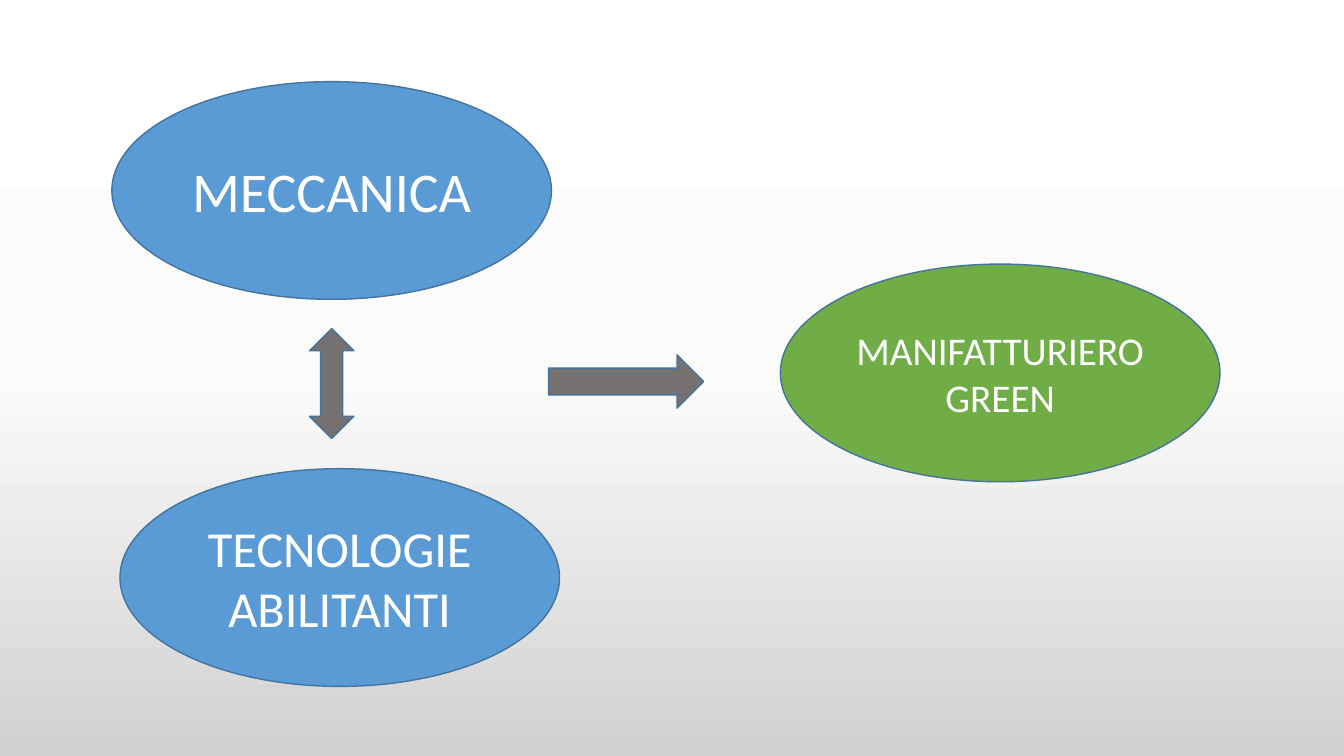
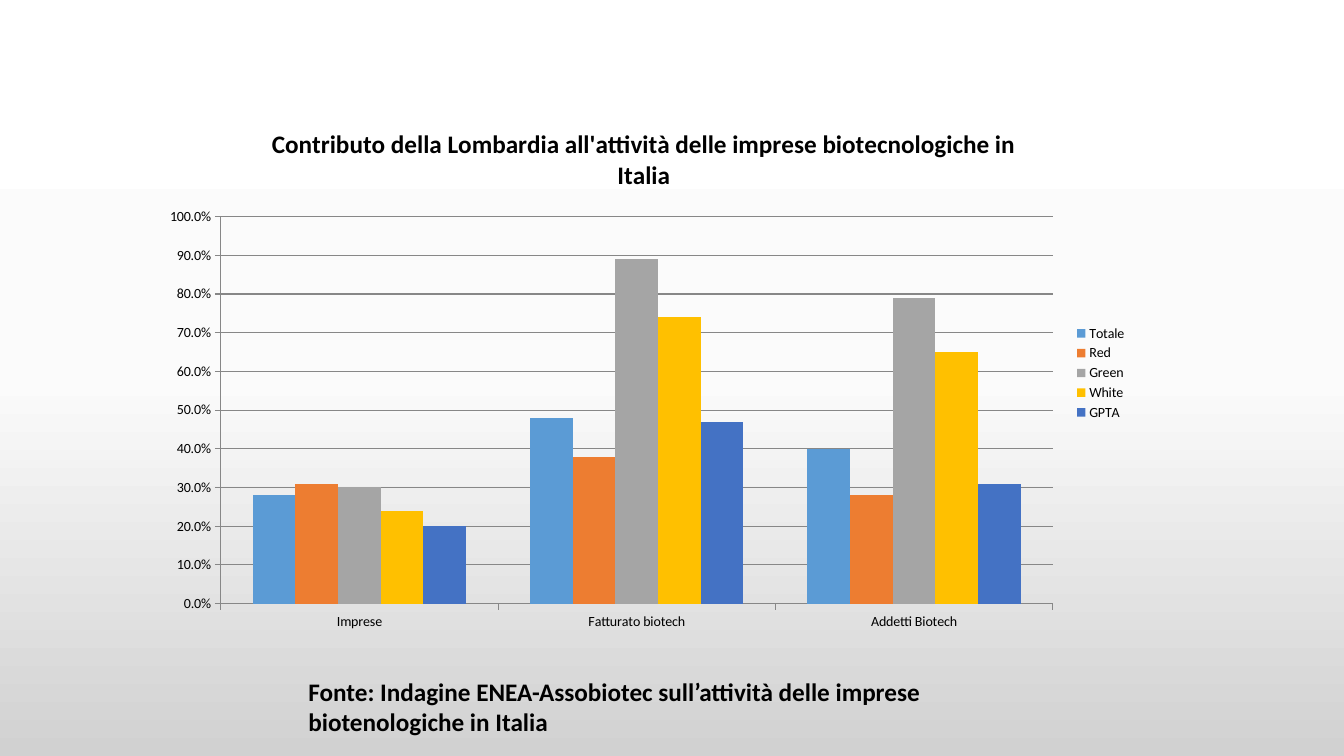
from copy import deepcopy
from typing import NamedTuple

from pptx import Presentation
from pptx.chart.data import CategoryChartData
from pptx.dml.color import RGBColor
from pptx.enum.chart import XL_CHART_TYPE, XL_LEGEND_POSITION, XL_TICK_MARK
from pptx.enum.dml import MSO_FILL
from pptx.enum.shapes import MSO_SHAPE
from pptx.enum.text import MSO_ANCHOR, MSO_AUTO_SIZE, PP_ALIGN
from pptx.util import Inches, Pt

FONT = "Calibri"
BLUE, GREEN, GREY = "5B9BD5", "70AD47", "767171"
OUTLINE, AXIS, WHITE, BLACK = "43739E", "878787", "FFFFFF", "000000"
BACKDROP = [(0, "FFFFFF"), (0.5, "FBFBFB"), (1, "D1D1D1")]
OVAL_SIZE = (4.36, 2.16)


class Oval(NamedTuple):
    left: float
    top: float
    fill: str
    size: int
    lines: list[str]


class Arrow(NamedTuple):
    kind: MSO_SHAPE
    box: tuple[float, float, float, float]


class Series(NamedTuple):
    name: str
    color: str
    shares: tuple[float, float, float]


OVALS = [
    Oval(1.11, 0.81, BLUE, 40, ["MECCANICA"]),
    Oval(1.19, 4.65, BLUE, 36, ["TECNOLOGIE ABILITANTI"]),
    Oval(7.74, 2.62, GREEN, 28, ["MANIFATTURIERO", "GREEN"]),
]
ARROWS = [
    Arrow(MSO_SHAPE.UP_DOWN_ARROW, (3.07, 3.26, 0.44, 1.09)),
    Arrow(MSO_SHAPE.RIGHT_ARROW, (5.44, 3.52, 1.54, 0.53)),
]
CATEGORIES = ["Imprese", "Fatturato biotech", "Addetti Biotech"]
SERIES = [
    Series("Totale", BLUE, (0.28, 0.48, 0.4)),
    Series("Red", "ED7D31", (0.31, 0.38, 0.28)),
    Series("Green", "A5A5A5", (0.3, 0.89, 0.79)),
    Series("White", "FFC000", (0.24, 0.74, 0.65)),
    Series("GPTA", "4472C4", (0.2, 0.47, 0.31)),
]
CHART_TITLE = ("Contributo della Lombardia all'attività delle imprese "
               "biotecnologiche in Italia")
SOURCE = ("Fonte: Indagine ENEA-Assobiotec sull’attività delle imprese "
          "biotenologiche in Italia")


def rgb(color: str) -> RGBColor:
    return RGBColor.from_string(color)


def style_font(font, size: int, color: str, bold: bool = False) -> None:
    font.name, font.size, font.bold = FONT, Pt(size), bold
    font.color.rgb = rgb(color)


def add_run(paragraph, text: str, size: int, color: str, bold: bool = False) -> None:
    run = paragraph.add_run()
    run.text = text
    style_font(run.font, size, color, bold)


def set_backdrop(master) -> None:
    """Give every slide the same vertical gradient."""
    fill = master.background.fill
    fill.gradient()
    fill.gradient_angle = 270
    stop_list = master.element.xpath("./p:cSld/p:bg//a:gsLst")[0]
    stop_list.append(deepcopy(stop_list[0]))
    for stop, (position, color) in zip(fill.gradient_stops, BACKDROP):
        stop.position = position
        stop.color.rgb = rgb(color)


def add_figure(slide, kind: MSO_SHAPE, box: tuple, fill: str):
    figure = slide.shapes.add_shape(kind, *map(Inches, box))
    figure.shadow.inherit = False
    figure.fill.solid()
    figure.fill.fore_color.rgb = rgb(fill)
    figure.line.color.rgb = rgb(OUTLINE)
    figure.line.width = Pt(1)
    return figure


def add_oval(slide, oval: Oval) -> None:
    box = (oval.left, oval.top, *OVAL_SIZE)
    frame = add_figure(slide, MSO_SHAPE.OVAL, box, oval.fill).text_frame
    frame.word_wrap = True
    frame.vertical_anchor = MSO_ANCHOR.MIDDLE
    for index, line in enumerate(oval.lines):
        paragraph = frame.add_paragraph() if index else frame.paragraphs[0]
        paragraph.alignment = PP_ALIGN.CENTER
        add_run(paragraph, line, oval.size, WHITE)


def style_line(line) -> None:
    line.color.rgb = rgb(AXIS)
    line.width = Pt(0.75)


def add_share_chart(slide) -> None:
    data = CategoryChartData(number_format="0.0%")
    data.categories = CATEGORIES
    for series in SERIES:
        data.add_series(series.name, series.shares)
    box = map(Inches, (1.49, 1.05, 9.79, 5.3))
    chart = slide.shapes.add_chart(XL_CHART_TYPE.COLUMN_CLUSTERED, *box, data).chart
    style_font(chart.font, 10, BLACK)

    # Title and legend
    chart.has_title = True
    add_run(chart.chart_title.text_frame.paragraphs[0], CHART_TITLE, 18, BLACK, True)
    chart.chart_title.include_in_layout = False
    chart.has_legend = True
    chart.legend.position = XL_LEGEND_POSITION.RIGHT
    chart.legend.include_in_layout = False

    # Columns
    plot = chart.plots[0]
    plot.gap_width, plot.overlap, plot.vary_by_categories = 150, 0, False
    for column, series in zip(plot.series, SERIES):
        column.format.fill.solid()
        column.format.fill.fore_color.rgb = rgb(series.color)

    # Axes
    for axis in (chart.category_axis, chart.value_axis):
        axis.major_tick_mark = XL_TICK_MARK.OUTSIDE
        axis.minor_tick_mark = XL_TICK_MARK.NONE
        style_line(axis.format.line)
    shares = chart.value_axis
    shares.minimum_scale, shares.maximum_scale, shares.major_unit = 0, 1, 0.1
    shares.has_major_gridlines = True
    style_line(shares.major_gridlines.format.line)
    shares.tick_labels.number_format = "0.0%"
    shares.tick_labels.number_format_is_linked = False


def add_source(slide) -> None:
    box = map(Inches, (2.96, 6.66, 6.88, 0.71))
    frame = slide.shapes.add_textbox(*box).text_frame
    frame.word_wrap = True
    frame.auto_size = MSO_AUTO_SIZE.SHAPE_TO_FIT_TEXT
    add_run(frame.paragraphs[0], SOURCE, 18, BLACK, True)


def main() -> None:
    prs = Presentation()
    prs.slide_width, prs.slide_height = Inches(13.33), Inches(7.5)
    set_backdrop(prs.slide_master)
    blank = prs.slide_layouts[6]

    # Mechanics and enabling technologies lead to green manufacturing
    sectors = prs.slides.add_slide(blank)
    for oval in OVALS:
        add_oval(sectors, oval)
    for arrow in ARROWS:
        add_figure(sectors, arrow.kind, arrow.box, GREY)

    # Lombardy's share of Italian biotech
    biotech = prs.slides.add_slide(blank)
    add_share_chart(biotech)
    add_source(biotech)

    prs.save("out.pptx")


if __name__ == "__main__":
    main()
